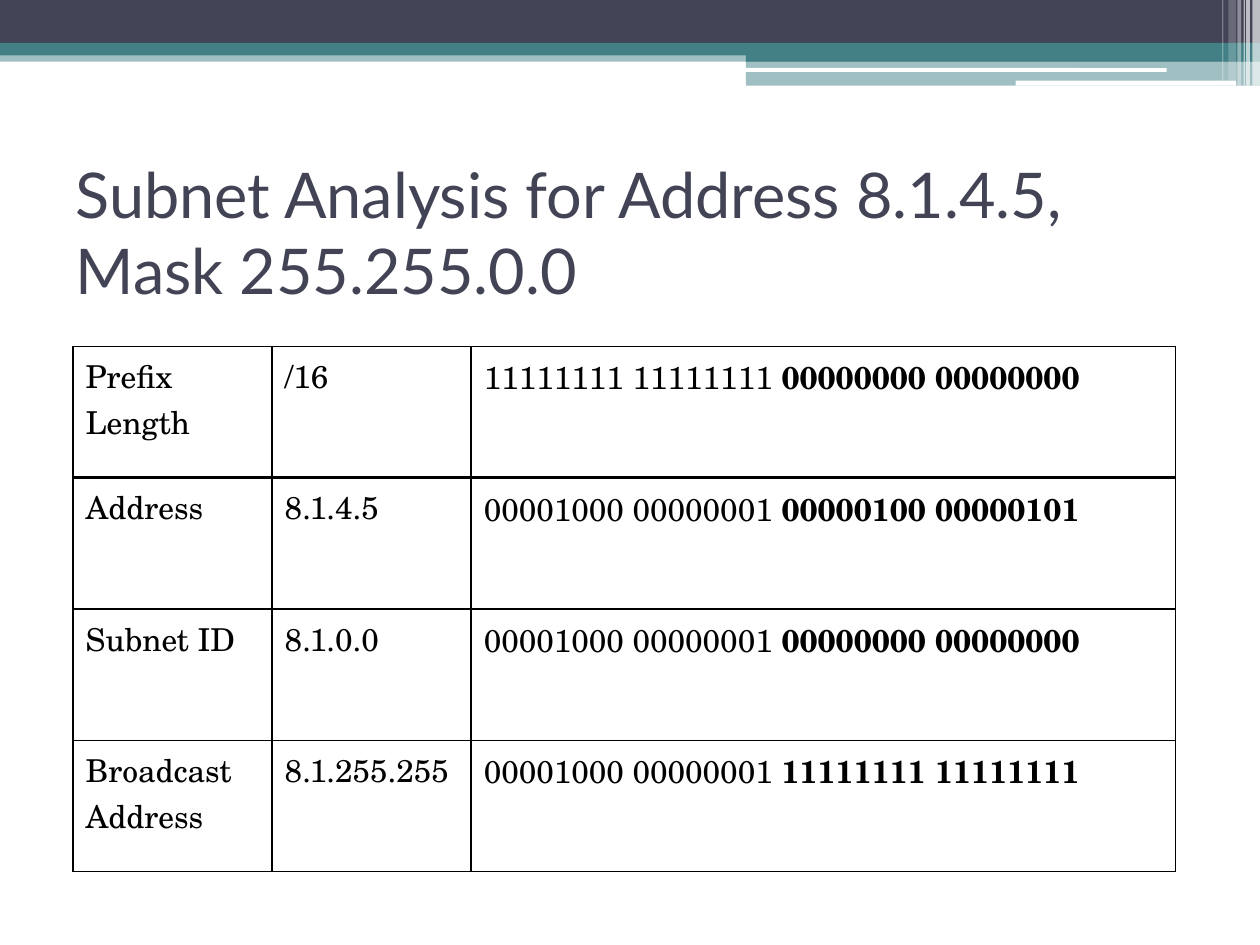
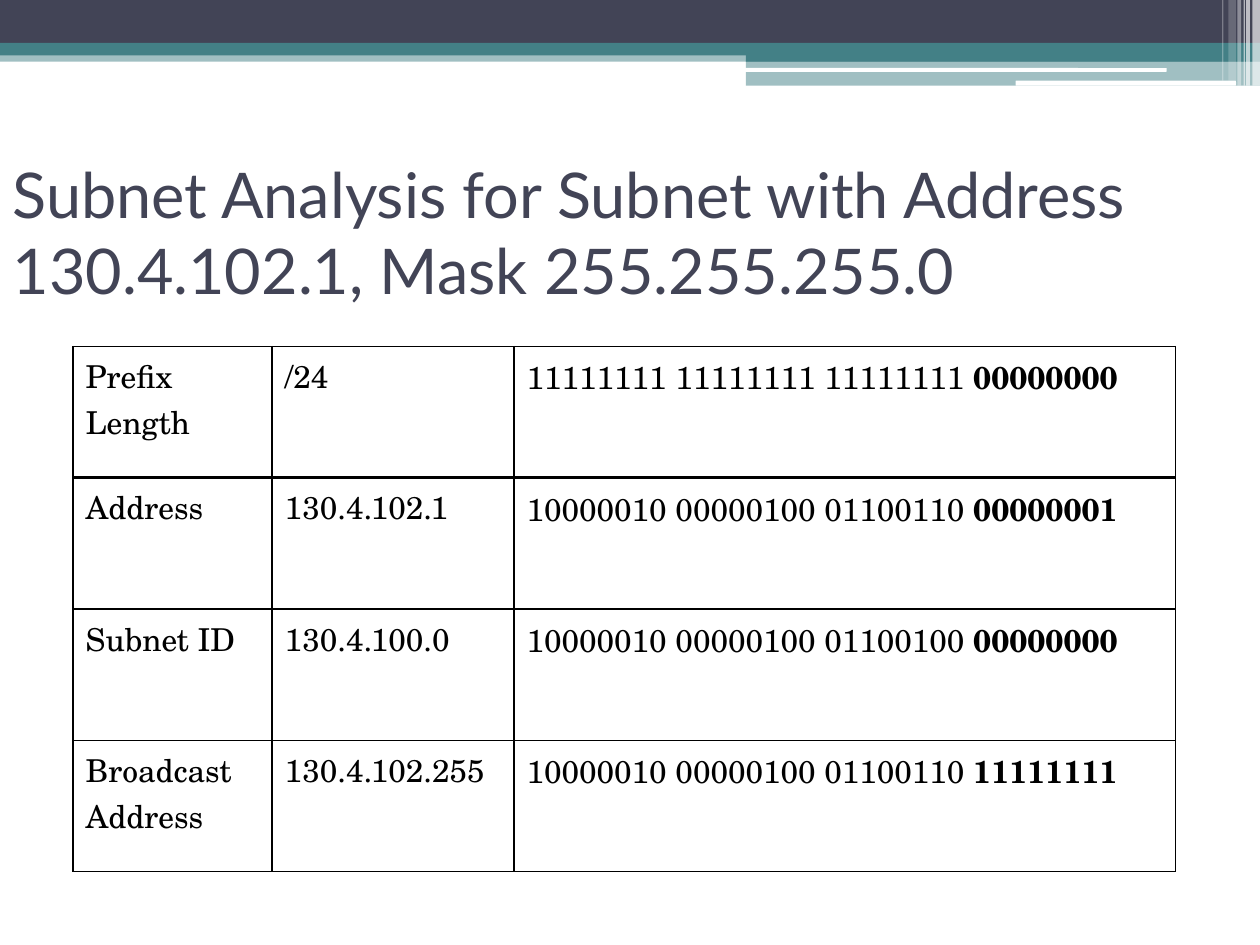
from lxml import etree
from pptx import Presentation
from pptx.dml.color import RGBColor
from pptx.enum import shapes, text
from pptx.oxml.ns import qn
from pptx.util import Inches, Pt

NAVY, TEAL, WHITE, BLACK = "424456", "438086", "FFFFFF", "000000"
HEAD_FONT, CELL_FONT = "Lato", "TeX Gyre Schola"

# left, top, width, height, colour, opacity in percent
BANDS = [
    (0, 0.4, 10, 0.09, TEAL, 50),
    (0, 0, 10, 0.34, NAVY, 100),
    (0, 0.34, 10, 0.1, TEAL, 100),
    (5.92, 0.39, 4.08, 0.1, TEAL, 100),
    (5.92, 0.48, 4.08, 0.2, TEAL, 50),
]
PILLS = [
    (5.91, 0.54, 3.35, 0.03, WHITE, 100),
    (8.06, 0.64, 1.75, 0.04, WHITE, 100),
]
# left, width, height, opacity of the white stripes in the corner
STRIPES = [
    (9.94, 0.06, 0.68, 65),
    (9.89, 0.03, 0.68, 65),
    (9.87, 0.01, 0.68, 60),
    (9.82, 0.03, 0.68, 40),
    (9.75, 0.06, 0.64, 20),
    (9.7, 0.01, 0.64, 30),
]


def color(value):
    return RGBColor.from_string(value)


def add_bar(slide, left, top, width, height, fill, alpha,
            kind=shapes.MSO_SHAPE.RECTANGLE):
    bar = slide.shapes.add_shape(
        kind, Inches(left), Inches(top), Inches(width), Inches(height))
    bar.shadow.inherit = False
    bar.line.fill.background()
    bar.fill.solid()
    bar.fill.fore_color.rgb = color(fill)
    if alpha < 100:
        tone = bar._element.spPr.find(".//" + qn("a:srgbClr"))
        etree.SubElement(tone, qn("a:alpha"), val=str(alpha * 1000))


def add_header(slide):
    for band in BANDS:
        add_bar(slide, *band)
    for pill in PILLS:
        add_bar(slide, *pill, kind=shapes.MSO_SHAPE.ROUNDED_RECTANGLE)
    for left, width, height, alpha in STRIPES:
        add_bar(slide, left, 0, width, height, WHITE, alpha)


def set_title(slide, words, left, width):
    title = slide.shapes.title
    title.left, title.top = Inches(left), Inches(1.25)
    title.width, title.height = Inches(width), Inches(1.17)
    frame = title.text_frame
    frame.text = words
    frame.word_wrap = True
    frame.auto_size = text.MSO_AUTO_SIZE.NONE
    frame.vertical_anchor = text.MSO_ANCHOR.MIDDLE
    para = frame.paragraphs[0]
    para.alignment = text.PP_ALIGN.LEFT
    para.font.name, para.font.size = HEAD_FONT, Pt(36)
    para.font.color.rgb = color(NAVY)


def add_edge(cell, side, width):
    edge = etree.SubElement(cell._tc.get_or_add_tcPr(), qn("a:ln" + side),
                            w=str(Pt(width)))
    fill = etree.SubElement(edge, qn("a:solidFill"))
    etree.SubElement(fill, qn("a:srgbClr"), val=BLACK)


def fill_cell(cell, row, plain, bold=""):
    """Write the text, and rule the line under the first row thicker."""
    for side in "LRTB":
        thick = (row, side) in [(0, "B"), (1, "T")]
        add_edge(cell, side, 2 if thick else 1)
    cell.fill.solid()
    cell.fill.fore_color.rgb = color(WHITE)
    para = cell.text_frame.paragraphs[0]
    para.font.name, para.font.size = CELL_FONT, Pt(18)
    para.font.color.rgb = color(BLACK)
    para.add_run().text = plain
    if bold:
        run = para.add_run()
        run.text = bold
        run.font.bold = True


def split_bits(address, prefix):
    """Return the network bits and the host bits of a dotted address."""
    octets = [f"{int(part):08b}" for part in address.split(".")]
    count = prefix // 8
    return " ".join(octets[:count]) + " ", " ".join(octets[count:])


def add_table(slide, prefix, mask, address, subnet, cast, middle):
    rows = [
        ("Prefix Length", f"/{prefix}", mask),
        ("Address", address, address),
        ("Subnet ID", subnet, subnet),
        ("Broadcast Address", cast, cast),
    ]
    first, total, height = 1.58, 8.75, 4.17
    table = slide.shapes.add_table(
        len(rows), 3, Inches(0.58), Inches(2.75),
        Inches(total), Inches(height)).table
    table.first_row = table.horz_banding = False
    for column, width in zip(table.columns,
                             (first, middle, total - first - middle)):
        column.width = Inches(width)
    for row, (label, value, dotted) in enumerate(rows):
        fill_cell(table.cell(row, 0), row, label)
        fill_cell(table.cell(row, 1), row, value)
        fill_cell(table.cell(row, 2), row, *split_bits(dotted, prefix))


def add_slide(deck, title, left, width, **subnet):
    slide = deck.slides.add_slide(deck.slide_layouts[5])
    add_header(slide)
    set_title(slide, title, left, width)
    add_table(slide, **subnet)


def main():
    deck = Presentation()
    deck.slide_width, deck.slide_height = Inches(10), Inches(7.5)
    add_slide(deck, "Subnet Analysis for Address 8.1.4.5, Mask 255.255.0.0",
              0.5, 9, prefix=16, mask="255.255.0.0", address="8.1.4.5",
              subnet="8.1.0.0", cast="8.1.255.255", middle=1.58)
    add_slide(deck, "Subnet Analysis for Subnet with Address 130.4.102.1, "
              "Mask 255.255.255.0",
              0, 9.83, prefix=24, mask="255.255.255.0", address="130.4.102.1",
              subnet="130.4.100.0", cast="130.4.102.255", middle=1.92)
    deck.save("out.pptx")


if __name__ == "__main__":
    main()
